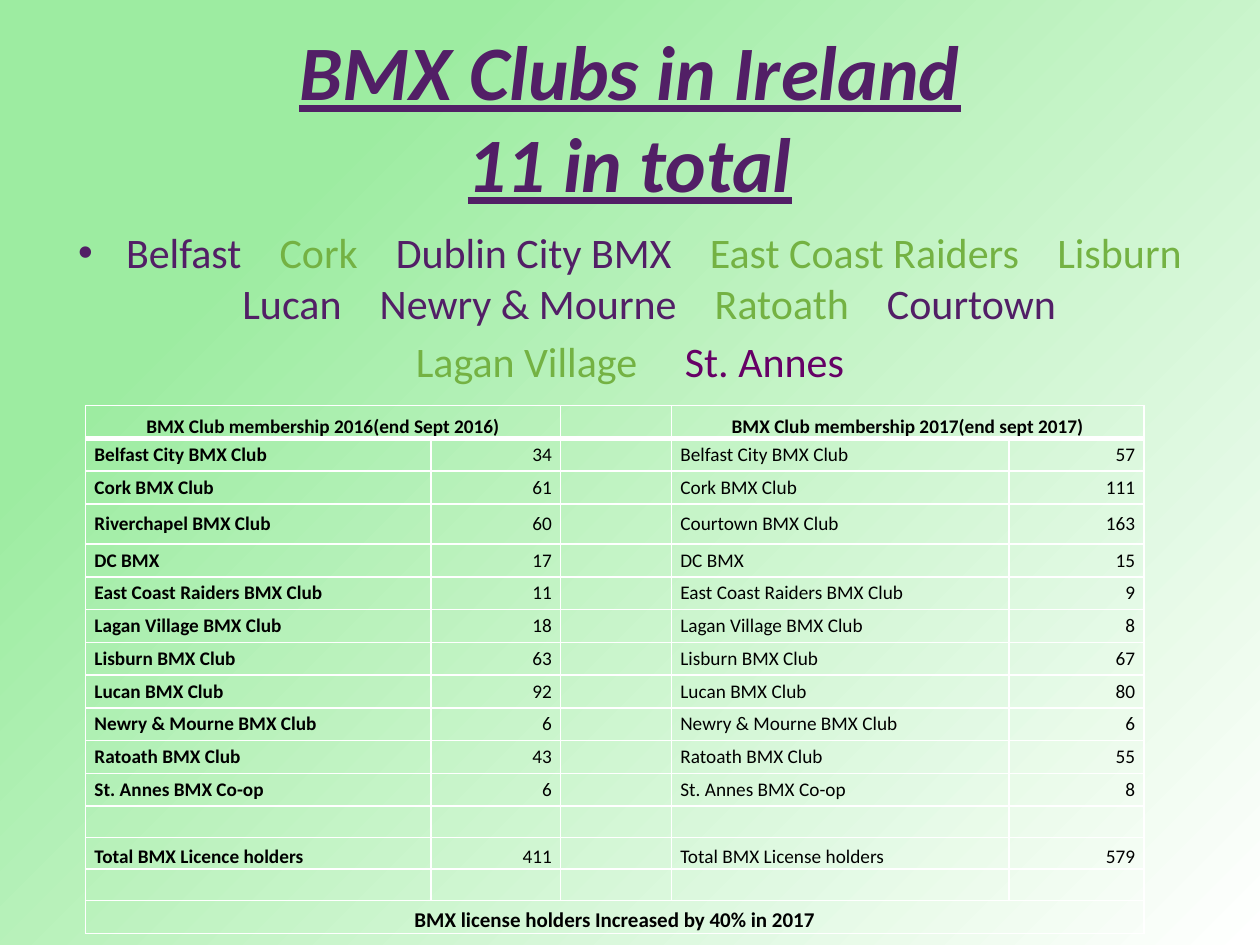
from lxml.etree import SubElement as Sub
from pptx import Presentation
from pptx.dml.color import RGBColor as RGB
from pptx.enum.text import MSO_ANCHOR as Anchor, PP_ALIGN as Align
from pptx.oxml.ns import qn
from pptx.util import Inches, Pt

# Content
HEX = {"green": "9DECA1", "white": "FFFFFF", "plum": "521F66",
       "leaf": "74B243", "purple": "660066", "black": "000000"}
FACE = "Calibri"
TITLE = ["BMX Clubs in Ireland", "11 in total"]
CLUBS = [
    [("Belfast", "plum"), ("Cork", "leaf"), ("Dublin City BMX", "plum"),
     ("East Coast Raiders", "leaf"), ("Lisburn", "leaf"), ("Lucan", "plum"),
     ("Newry & Mourne", "plum"), ("Ratoath", "leaf"), ("Courtown", "plum")],
    [("Lagan Village", "leaf"), ("St. Annes", "purple")],
]
GAPS = [16.3, 21.7]  # extra points after each club, per paragraph
HEADS = ["BMX Club membership 2016(end Sept 2016)",
         "BMX Club membership 2017(end sept 2017)"]
ROWS = [
    ("Belfast City BMX Club", 34, "Belfast City BMX Club", 57),
    ("Cork BMX Club", 61, "Cork BMX Club", 111),
    ("Riverchapel BMX Club", 60, "Courtown BMX Club", 163),
    ("DC BMX", 17, "DC BMX", 15),
    ("East Coast Raiders BMX Club", 11, "East Coast Raiders BMX Club", 9),
    ("Lagan Village BMX Club", 18, "Lagan Village BMX Club", 8),
    ("Lisburn BMX Club", 63, "Lisburn BMX Club", 67),
    ("Lucan BMX Club", 92, "Lucan BMX Club", 80),
    ("Newry & Mourne BMX Club", 6, "Newry & Mourne BMX Club", 6),
    ("Ratoath BMX Club", 43, "Ratoath BMX Club", 55),
    ("St. Annes BMX Co-op", 6, "St. Annes BMX Co-op", 8),
    None,
    ("Total BMX Licence holders", 411, "Total BMX License holders", 579),
    None,
]
FOOT = "BMX license holders Increased by 40% in 2017"
WIDTHS = [2.74, 1.03, 0.88, 2.68, 1.07]
HEIGHTS = [0.26] * 3 + [0.32] + [0.26] * 7 + [0.26] + [0.25] * 3 + [0.26]


def color(name):
    return RGB.from_string(HEX[name])


def add_run(para, text, size, tint, bold=False):
    run = para.add_run()
    run.text = text
    font = run.font
    font.name, font.size, font.bold = FACE, Pt(size), bold
    font.color.rgb = color(tint)
    return run


def add_box(x, y, w, h, anchor):
    frame = slide.shapes.add_textbox(*map(Inches, (x, y, w, h))).text_frame
    frame.word_wrap = True
    frame.vertical_anchor = anchor
    return frame


def set_edges(cell, top, low):
    props = cell._tc.get_or_add_tcPr()
    for side, width in zip("LRTB", (1, 1, top, low)):
        line = Sub(props, qn(f"a:ln{side}"), w=str(Pt(width)))
        fill = Sub(line, qn("a:solidFill"))
        Sub(fill, qn("a:srgbClr"), val=HEX["white"])


def fill_cell(row, col, text, align, anchor, size=11, bold=False):
    cell = grid.cell(row, col)
    cell.vertical_anchor = anchor
    para = cell.text_frame.paragraphs[0]
    para.alignment = align
    add_run(para, str(text), size, "black", bold)


# Slide and background
deck = Presentation()
deck.slide_width, deck.slide_height = Inches(10), Inches(7.5)
slide = deck.slides.add_slide(deck.slide_layouts[6])
back = slide.background.fill
back.gradient()
back.gradient_angle = 315
for stop, (place, tint) in zip(back.gradient_stops,
                               [(0.22, "green"), (1, "white")]):
    stop.position = place
    stop.color.rgb = color(tint)

# Club names
frame = add_box(0.5, 1.75, 9, 1.39, Anchor.TOP)
for i, names in enumerate(CLUBS):
    para = frame.add_paragraph() if i else frame.paragraphs[0]
    para.alignment = Align.CENTER
    if i:
        para.space_before = Pt(4.8)
    else:
        props = para._p.get_or_add_pPr()
        props.set("marL", str(Inches(0.38)))
        props.set("indent", str(Inches(-0.38)))
        Sub(props, qn("a:buFont"), typeface="Arial")
        Sub(props, qn("a:buChar"), char="•")
    for name, tint in names:
        add_run(para, name, 24, tint)
        if (name, tint) != CLUBS[-1][-1]:
            gap = add_run(para, " ", 24, tint)
            gap.font._element.set("spc", str(round(GAPS[i] * 100)))

# Title
para = add_box(0.5, 0.13, 9, 1.58, Anchor.MIDDLE).paragraphs[0]
para.alignment = Align.CENTER
for i, line in enumerate(TITLE):
    if i:
        para.add_line_break()
    run = add_run(para, line, 44, "plum", True)
    run.font.italic = run.font.underline = True

# Membership table
count = len(HEIGHTS)
grid = slide.shapes.add_table(
    count, len(WIDTHS), Inches(0.68), Inches(3.22),
    Inches(sum(WIDTHS)), Inches(sum(HEIGHTS))).table
grid.first_row = grid.horz_banding = False
for col, width in zip(grid.columns, WIDTHS):
    col.width = Inches(width)
for r, height in enumerate(HEIGHTS):
    grid.rows[r].height = Inches(height)
    for c in range(len(WIDTHS)):
        cell = grid.cell(r, c)
        cell.margin_left = cell.margin_right = Inches(0.07)
        cell.margin_top = cell.margin_bottom = 0
        set_edges(cell, 3 if r == 1 else 1, 3 if r == 0 else 1)
        cell.fill.background()
        end = cell.text_frame.paragraphs[0]._p.get_or_add_endParaRPr()
        end.set("sz", "1100")

for col, head in zip((0, 3), HEADS):
    grid.cell(0, col).merge(grid.cell(0, col + 1))
    fill_cell(0, col, head, Align.CENTER, Anchor.BOTTOM, bold=True)
for r, row in enumerate(ROWS, 1):
    if row:
        anchor = Anchor.BOTTOM if row[0].startswith("Total") else Anchor.MIDDLE
        for col, text in zip((0, 1, 3, 4), row):
            align = Align.LEFT if col in (0, 3) else Align.RIGHT
            fill_cell(r, col, text, align, anchor, bold=col == 0)
grid.cell(count - 1, 0).merge(grid.cell(count - 1, 4))
fill_cell(count - 1, 0, FOOT, Align.CENTER, Anchor.BOTTOM, 12, True)

deck.save("out.pptx")
